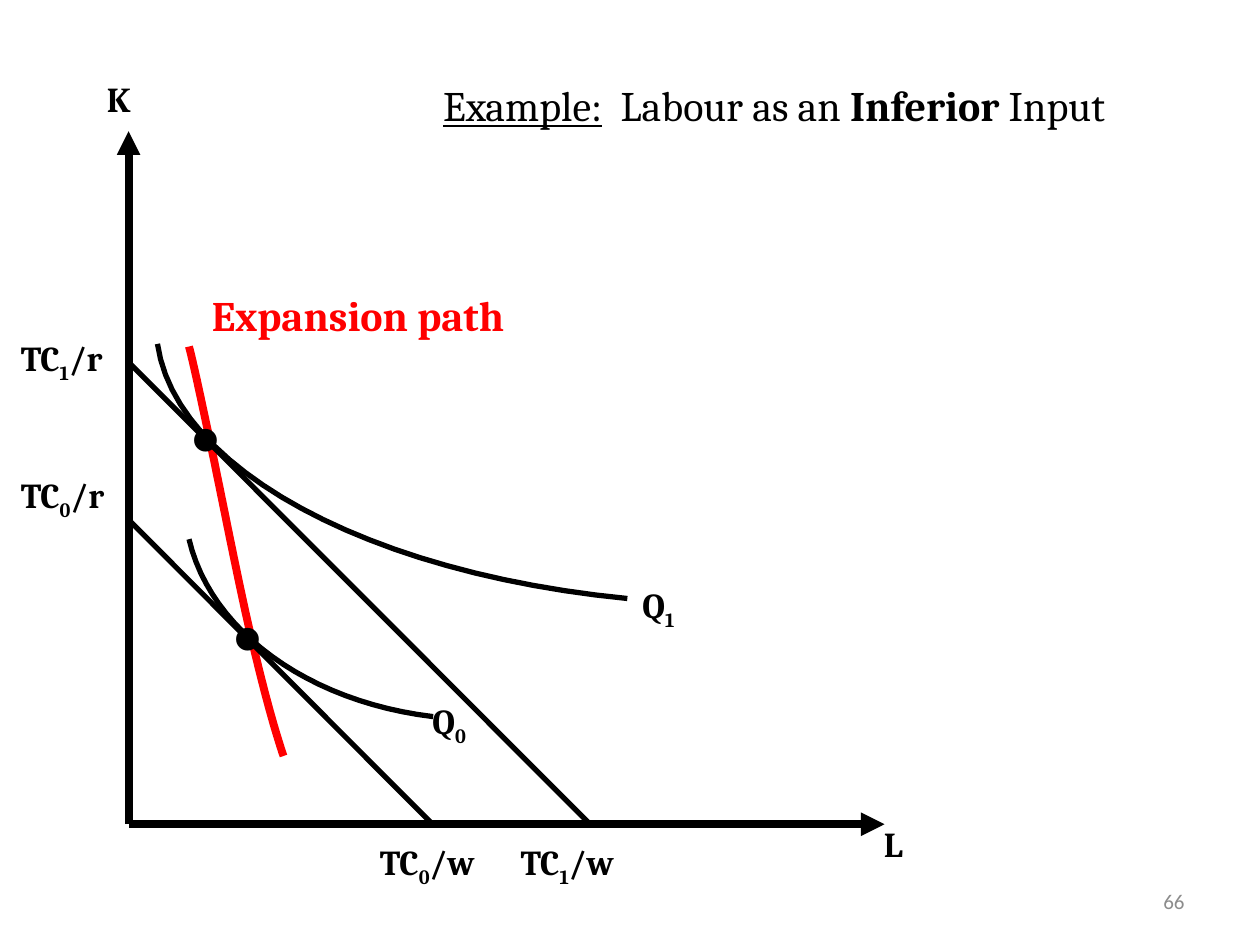
"""Draw the expansion path of a firm whose labour is an inferior input."""
from dataclasses import dataclass

from lxml.etree import SubElement
from pptx import Presentation
from pptx.dml.color import RGBColor
from pptx.enum.shapes import MSO_CONNECTOR
from pptx.enum.text import MSO_ANCHOR, MSO_AUTO_SIZE, PP_ALIGN
from pptx.oxml.ns import qn
from pptx.util import Inches, Pt

COLORS = {"ink": "000000", "path": "FF0000", "number": "8C8C8C"}
COLUMNS, ROWS = 120, 90
WIDTH, HEIGHT = Inches(10), Inches(7.5)
CURVE_STEPS = 24

Point = tuple[float, float]


@dataclass(frozen=True)
class Span:
    text: str
    bold: bool = True
    underline: bool = False
    subscript: bool = False


@dataclass(frozen=True)
class Label:
    spans: tuple[Span, ...]
    column: float
    row: float
    columns: float
    rows: float = 5.2
    size: float = 20
    font: str = "Cambria"
    color: str = "ink"
    align: PP_ALIGN = PP_ALIGN.LEFT
    anchor: MSO_ANCHOR = MSO_ANCHOR.TOP
    wrap: bool = False


@dataclass(frozen=True)
class Line:
    start: Point
    end: Point
    weight: float = 3
    arrow: bool = False


@dataclass(frozen=True)
class Curve:
    points: tuple[Point, ...]
    weight: float = 3
    color: str = "ink"


def indexed(base: str, index: str, rest: str = "") -> tuple[Span, ...]:
    """Return a symbol with a subscript and an optional ending."""
    spans = (Span(base), Span(index, subscript=True))
    return spans + ((Span(rest),) if rest else ())


def tangency(column: float, row: float) -> Label:
    """Return the dot that marks a tangency point."""
    return Label((Span("•"),), column, row, 5.2, 10.8, 48, "Times New Roman")


ORIGIN = (12.25, 78.5)
TITLE = Label(
    (Span("Example:", False, True), Span("  Labour as an ", False),
     Span("Inferior"), Span(" Input", False)),
    41, 7, 72, 6, 24, wrap=True)

EXPANSION_PATH = Curve(
    ((27, 72), (26, 69), (25.2, 66), (24, 61), (22.8, 56),
     (21, 46.7), (20, 42), (19, 37.3), (18.4, 34.5), (18, 33)), 4.5, "path")

LINES = (
    Line(ORIGIN, (84.25, 78.5), 4.5, True),
    Line(ORIGIN, (12.25, 12.5), 4.5, True),
    Line((12.25, 49.5), (41.2, 78.5)),
    Line((12.25, 34.5), (56.2, 78.5)),
)

ISOQUANTS = (
    Curve(((41.25, 68.25), (29.4, 66.85), (20.05, 60.1), (18, 51.35))),
    Curve(((59.75, 57), (35.05, 54.6), (16.7, 44.65), (15, 32.75))),
)

LABELS = (
    Label((Span("K"),), 9, 6.75, 5),
    Label((Span("L"),), 83, 77.75, 4.4),
    Label(indexed("TC", "1", "/r"), 0.8, 31.5, 10.4),
    Label(indexed("TC", "0", "/r"), 0.8, 44.5, 10.4),
    Label(indexed("TC", "0", "/w"), 35, 79.5, 11.5),
    Label(indexed("TC", "1", "/w"), 48.4, 79.5, 11.5),
    Label(indexed("Q", "1"), 60, 55, 6.2),
    Label(indexed("Q", "0"), 40, 66, 6.2),
    tangency(21, 55),
    tangency(17, 36),
    Label((Span("Expansion path"),), 19, 27, 30.7, 6, 24, color="path"),
    Label((Span("66", False),), 86, 83.4, 28, 4.8, 12, "Calibri", "number",
          PP_ALIGN.RIGHT, MSO_ANCHOR.MIDDLE, True),
)


def x(columns: float) -> int:
    """Convert grid columns to a length."""
    return round(WIDTH * columns / COLUMNS)


def y(rows: float) -> int:
    """Convert grid rows to a length."""
    return round(HEIGHT * rows / ROWS)


def rgb(color: str) -> RGBColor:
    """Look up a named colour."""
    return RGBColor.from_string(COLORS[color])


def write_label(shape, label: Label) -> None:
    """Place a text shape and fill it run by run."""
    shape.left, shape.top = x(label.column), y(label.row)
    shape.width, shape.height = x(label.columns), y(label.rows)
    frame = shape.text_frame
    frame.word_wrap = label.wrap
    frame.auto_size = MSO_AUTO_SIZE.NONE
    frame.vertical_anchor = label.anchor
    paragraph = frame.paragraphs[0]
    paragraph.alignment = label.align
    for span in label.spans:
        run = paragraph.add_run()
        run.text = span.text
        font = run.font
        font.name, font.size = label.font, Pt(label.size)
        font.bold, font.underline = span.bold, span.underline
        font.color.rgb = rgb(label.color)
        if span.subscript:
            run._r.get_or_add_rPr().set("baseline", "-25000")


def draw_line(slide, line: Line) -> None:
    """Draw a straight line, with an arrowhead where asked."""
    connector = slide.shapes.add_connector(
        MSO_CONNECTOR.STRAIGHT, x(line.start[0]), y(line.start[1]),
        x(line.end[0]), y(line.end[1]))
    connector.line.color.rgb = rgb("ink")
    connector.line.width = Pt(line.weight)
    if line.arrow:
        SubElement(connector.line._get_or_add_ln(), qn("a:tailEnd"), type="triangle")
    SubElement(connector._element.spPr, qn("a:effectLst"))


def bezier(controls: tuple[Point, ...], t: float) -> Point:
    """Return the point at share t of a cubic curve."""
    weights = ((1 - t) ** 3, 3 * t * (1 - t) ** 2, 3 * t ** 2 * (1 - t), t ** 3)
    across, down = (sum(w * value for w, value in zip(weights, axis))
                    for axis in zip(*controls))
    return x(across), y(down)


def draw_curve(slide, curve: Curve) -> None:
    """Draw joined cubic curves as one open outline."""
    outline = [bezier(curve.points[first:first + 4], step / CURVE_STEPS)
               for first in range(0, len(curve.points) - 1, 3)
               for step in range(CURVE_STEPS + 1)]
    builder = slide.shapes.build_freeform(*outline[0])
    builder.add_line_segments(outline[1:], close=False)
    shape = builder.convert_to_shape()
    shape.shadow.inherit = False
    shape.fill.background()
    shape.line.color.rgb = rgb(curve.color)
    shape.line.width = Pt(curve.weight)


def main() -> None:
    """Build and save the slide."""
    deck = Presentation()
    deck.slide_width, deck.slide_height = WIDTH, HEIGHT
    slide = deck.slides.add_slide(deck.slide_layouts.get_by_name("Title Only"))
    write_label(slide.shapes.title, TITLE)
    draw_curve(slide, EXPANSION_PATH)
    for line in LINES:
        draw_line(slide, line)
    for isoquant in ISOQUANTS:
        draw_curve(slide, isoquant)
    for label in LABELS:
        write_label(slide.shapes.add_textbox(0, 0, 0, 0), label)
    deck.save("out.pptx")


if __name__ == "__main__":
    main()
